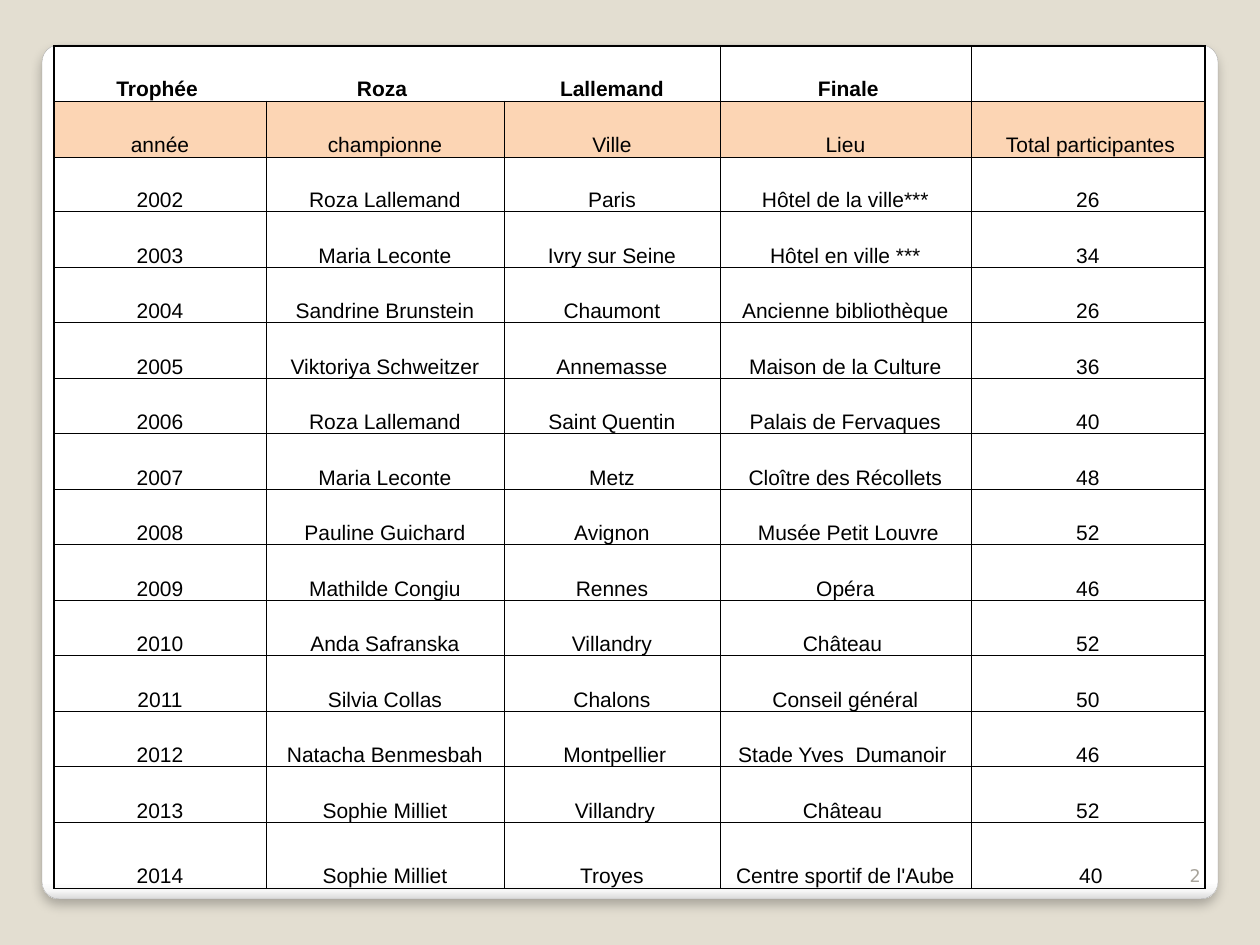
"""Builds a slide with the table of Roza Lallemand trophy finals."""
from lxml.etree import SubElement
from pptx import Presentation
from pptx.dml.color import RGBColor
from pptx.enum.shapes import MSO_SHAPE as SHAPE
from pptx.enum.text import MSO_ANCHOR as ANCHOR, PP_ALIGN as ALIGN
from pptx.oxml.ns import qn
from pptx.util import Emu, Pt

BEIGE = RGBColor(0xE3, 0xDE, 0xD1)
WHITE = RGBColor(0xFF, 0xFF, 0xFF)
BLACK = RGBColor(0x00, 0x00, 0x00)
PEACH = RGBColor(0xFC, 0xD5, 0xB4)
EDGE = RGBColor(0xA4, 0xA4, 0xA4)
NUMBER = RGBColor(0xA8, 0xA4, 0x9B)
MIST = RGBColor(0xF7, 0xF7, 0xF7)
SILVER = RGBColor(0xDA, 0xDA, 0xDA)

ROWS = [
    ("Trophée ", "Roza ", "Lallemand", " Finale", ""),
    ("année", "championne", "Ville", "Lieu", " Total participantes"),
    ("2002", "Roza Lallemand", "Paris", "Hôtel de la ville***", "26"),
    ("2003", "Maria Leconte", "Ivry sur Seine", "Hôtel en ville ***", "34"),
    ("2004", "Sandrine Brunstein", "Chaumont", "Ancienne bibliothèque", "26"),
    ("2005", "Viktoriya Schweitzer", "Annemasse", "Maison de la Culture", "36"),
    ("2006", "Roza Lallemand", "Saint Quentin", "Palais de Fervaques", "40"),
    ("2007", "Maria Leconte", "Metz", "Cloître des Récollets", "48"),
    ("2008", "Pauline Guichard", "Avignon", " Musée Petit Louvre", "52"),
    ("2009", "Mathilde Congiu", "Rennes", "Opéra", "46"),
    ("2010", "Anda Safranska", "Villandry", "Château ", "52"),
    ("2011", "Silvia Collas", "Chalons", "Conseil général", "50"),
    ("2012", "Natacha Benmesbah", " Montpellier", "Stade Yves  Dumanoir ", "46"),
    ("2013", "Sophie Milliet", " Villandry", "Château ", "52"),
    ("2014", "Sophie Milliet", "Troyes", "Centre sportif de l'Aube", " 40"),
]
COLS = [212, 238, 216, 251, 234]
HEIGHTS = [55, 56] * 7 + [66]


def px(n):
    return Emu(round(n * 914400 / 126))


def border(cell, side, width):
    ln = SubElement(cell._tc.get_or_add_tcPr(), qn(f"a:ln{side}"), w=str(Pt(width)))
    if width:
        fill = SubElement(ln, qn("a:solidFill"))
        SubElement(fill, qn("a:srgbClr"), val=str(BLACK))
    else:
        SubElement(ln, qn("a:noFill"))


prs = Presentation()
prs.slide_width, prs.slide_height = px(1260), px(945)
s = prs.slides.add_slide(prs.slide_layouts[6])
s.background.fill.solid()
s.background.fill.fore_color.rgb = BEIGE

card = s.shapes.add_shape(SHAPE.ROUNDED_RECTANGLE, px(42), px(45), px(1176), px(854))
card.adjustments[0] = 0.02
card.line.color.rgb = EDGE
card.line.width = Pt(0.16)
card.fill.gradient()
card.fill.gradient_angle = 270
stops = card._element.spPr.find(".//" + qn("a:gsLst"))
stops.clear()
for pos, color in [(0, WHITE), (98, WHITE), (99, MIST), (100, SILVER)]:
    gs = SubElement(stops, qn("a:gs"), pos=str(pos * 1000))
    SubElement(gs, qn("a:srgbClr"), val=str(color))
card.shadow.inherit = False
shadow = SubElement(card._element.spPr.find(qn("a:effectLst")), qn("a:outerShdw"),
                    blurRad=str(Pt(6)), dist=str(Pt(4)), dir="5400000", rotWithShape="0")
black = SubElement(shadow, qn("a:srgbClr"), val=str(BLACK))
SubElement(black, qn("a:alpha"), val="25000")

number = s.shapes.add_textbox(px(1150), px(842), px(63), px(50))
tf = number.text_frame
tf.word_wrap = True
tf.vertical_anchor = ANCHOR.BOTTOM
tf.text = "2"
p = tf.paragraphs[0]
p.alignment = ALIGN.RIGHT
p.font.size = Pt(10)
p.font.name = "DejaVu Sans"
p.font.color.rgb = NUMBER

table = s.shapes.add_table(len(ROWS), len(COLS), px(54), px(46),
                           px(sum(COLS)), px(sum(HEIGHTS))).table
table.first_row = table.horz_banding = False
for column, width in zip(table.columns, COLS):
    column.width = px(width)
last_row, last_col = len(ROWS) - 1, len(COLS) - 1
for i, (row, height) in enumerate(zip(ROWS, HEIGHTS)):
    table.rows[i].height = px(height)
    for j, text in enumerate(row):
        cell = table.cell(i, j)
        cell.margin_left = cell.margin_right = cell.margin_top = px(1)
        cell.margin_bottom = 0
        cell.vertical_anchor = ANCHOR.BOTTOM
        border(cell, "L", 1 if j == 0 else 0 if i == 0 and j < 3 else 0.5)
        border(cell, "R", 1 if j == last_col else 0 if i == 0 and j < 2 else 0.5)
        border(cell, "T", 1 if i == 0 else 0.5)
        border(cell, "B", 1 if i == last_row else 0.5)
        if i == 1:
            cell.fill.solid()
            cell.fill.fore_color.rgb = PEACH
        else:
            cell.fill.background()
        cell.text_frame.text = text
        p = cell.text_frame.paragraphs[0]
        p.alignment = ALIGN.CENTER
        p.font.size = Pt(12)
        p.font.name = "Arial"
        p.font.bold = i == 0
        p.font.color.rgb = BLACK

prs.save("out.pptx")
